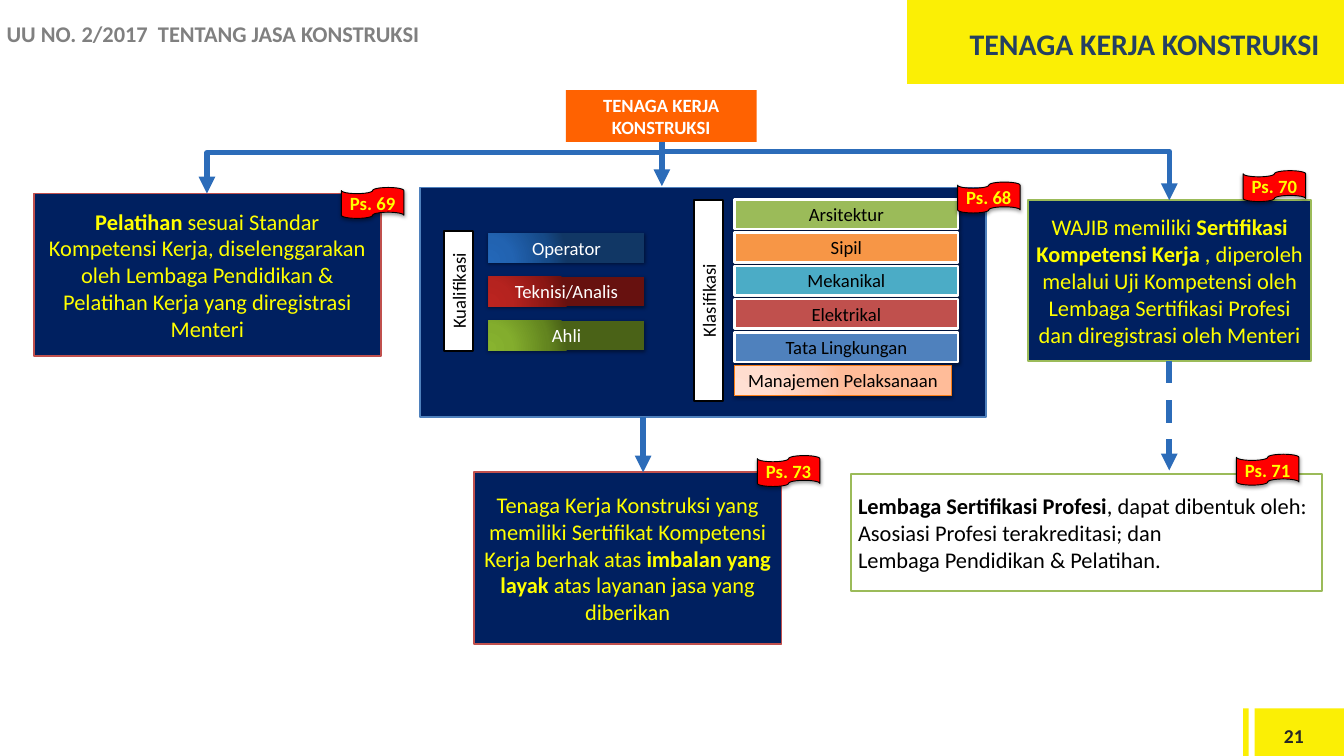
from dataclasses import dataclass
from lxml.etree import SubElement
from pptx import Presentation
from pptx.dml.color import RGBColor
from pptx.enum.dml import MSO_LINE
from pptx.enum.shapes import MSO_CONNECTOR, MSO_SHAPE
from pptx.enum.text import MSO_ANCHOR, MSO_AUTO_SIZE, PP_ALIGN
from pptx.oxml.ns import qn
from pptx.util import Inches, Pt


@dataclass(frozen=True)
class Theme:
    font: str = "Calibri"
    title: int = 32
    body: int = 24
    page: int = 21
    label: int = 20
    brand: str = "FBEF05"
    ink: str = "254061"
    navy: str = "002060"
    yellow: str = "FFFF00"
    orange: str = "FF6201"
    flow: str = "2C6CB9"
    red: str = "C0504D"
    green: str = "9BBB59"
    blue: str = "4F81BD"
    tape: str = "FF0000"
    gray: str = "808080"
    dark: str = "262626"
    black: str = "000000"
    white: str = "FFFFFF"


T = Theme()
STOPS = (0, 30, 75, 100)
SOFT = (42, 1.6)   # shadow opacity in percent, distance in points
FIRM = (40, 2)

# Place, border colour, text; ** marks bold
NOTES = [
    ((7.05, 7.03, 4.58, 2.55), T.red,
     "Tenaga Kerja Konstruksi yang memiliki Sertifikat Kompetensi Kerja berhak atas "
     "**imbalan yang layak **atas layanan jasa yang diberikan"),
    ((15.3, 2.98, 4.21, 2.39), T.green,
     "WAJIB memiliki **Sertifikasi Kompetensi Kerja **, diperoleh melalui Uji Kompetensi "
     "oleh Lembaga Sertifikasi Profesi dan diregistrasi oleh Menteri"),
    ((0.5, 2.88, 5.17, 2.42), T.red,
     "**Pelatihan **sesuai Standar Kompetensi Kerja, diselenggarakan oleh Lembaga "
     "Pendidikan & Pelatihan Kerja yang diregistrasi Menteri"),
]
BODIES = ["**Lembaga Sertifikasi Profesi**, dapat dibentuk oleh:",
          "Asosiasi Profesi terakreditasi; dan",
          "Lembaga Pendidikan & Pelatihan."]
LEVELS = [
    ("Operator", ("2367B8", "2263B1", "164A88", "113765")),
    ("Teknisi/Analis", ("BC2420", "B5231F", "8B1714", "67110F")),
    ("Ahli", ("88B32F", "83AD2D", "63851F", "4A6217")),
]
FIELDS = [
    ("Arsitektur", T.green), ("Sipil", "F79646"), ("Mekanikal", "4BACC6"),
    ("Elektrikal", T.red), ("Tata Lingkungan", T.blue),
    ("Manajemen Pelaksanaan", ("FFE0D3", "FFDDCF", "FFCCB5", "FFBC99")),
]
SIDES = [("Kualifikasi", (5.93, 4.11, 1.79, 0.44)),
         ("Klasifikasi", (9.05, 4.25, 2.99, 0.44))]
TAPES = [("Ps. 68", 14.25, 2.71), ("Ps. 69", 5.08, 2.79), ("Ps. 70", 18.5, 2.54),
         ("Ps. 71", 18.4, 6.76), ("Ps. 73", 11.27, 6.78)]
ROOT = (9.85, 2.12)


def color(code):
    return RGBColor.from_string(code)


def write(shape, text, size=T.label, ink=T.black, bold=False, align=PP_ALIGN.CENTER,
          anchor=MSO_ANCHOR.MIDDLE, grow=False, inset=(0.1, 0.05)):
    """Fill a shape with text: a list gives paragraphs, ** toggles bold."""
    frame = shape.text_frame
    frame.word_wrap = True
    frame.vertical_anchor = MSO_ANCHOR.TOP if grow else anchor
    frame.auto_size = MSO_AUTO_SIZE.SHAPE_TO_FIT_TEXT if grow else MSO_AUTO_SIZE.NONE
    frame.margin_left = frame.margin_right = Inches(inset[0])
    frame.margin_top = frame.margin_bottom = Inches(inset[1])
    for i, line in enumerate([text] if isinstance(text, str) else text):
        para = frame.add_paragraph() if i else frame.paragraphs[0]
        para.alignment = align
        for j, part in enumerate(line.split("**")):
            if part:
                run = para.add_run()
                run.text = part
                run.font.name, run.font.size = T.font, Pt(size)
                run.font.bold = bold or j % 2 == 1
                run.font.color.rgb = color(ink)


def blend(shape, codes):
    """Swap the solid fill for a radial gradient."""
    solid = shape._element.spPr.find(qn("a:solidFill"))
    grad = solid.makeelement(qn("a:gradFill"), {"rotWithShape": "1"})
    stops = SubElement(grad, qn("a:gsLst"))
    for pos, code in zip(STOPS, codes):
        stop = SubElement(stops, qn("a:gs"), pos=str(pos * 1000))
        SubElement(stop, qn("a:srgbClr"), val=code)
    path = SubElement(grad, qn("a:path"), path="circle")
    SubElement(path, qn("a:fillToRect"), l="5000", t="100000", r="120000", b="10000")
    solid.getparent().replace(solid, grad)


def shade(shape, alpha, dist):
    effects = shape._element.spPr.find(qn("a:effectLst"))
    outer = SubElement(effects, qn("a:outerShdw"), blurRad=str(Pt(4)), dist=str(Pt(dist)),
                       dir="5400000", rotWithShape="0")
    tint = SubElement(outer, qn("a:srgbClr"), val=T.black)
    SubElement(tint, qn("a:alpha"), val=str(alpha * 1000))


def box(host, at, fill, text=None, line=None, width=2, shadow=None, turn=0,
        kind=MSO_SHAPE.RECTANGLE, **style):
    shape = host.add_shape(kind, *map(Inches, at))
    shape.shadow.inherit = False
    shape.rotation = turn
    shape.fill.solid()
    if isinstance(fill, str):
        shape.fill.fore_color.rgb = color(fill)
    else:
        blend(shape, fill)
    if line:
        shape.line.color.rgb = color(line)
        shape.line.width = Pt(width)
    else:
        shape.line.fill.background()
    if shadow:
        shade(shape, *shadow)
    if text:
        write(shape, text, **style)


def label(host, at, text, **style):
    write(host.add_textbox(*map(Inches, at)), text, **style)


def arrow(host, start, end, dash=False, bend=None):
    """Draw an arrow; bend is the share of the drop before an elbow turns."""
    kind = MSO_CONNECTOR.ELBOW if bend else MSO_CONNECTOR.STRAIGHT
    link = host.add_connector(kind, *map(Inches, start + end))
    link.line.color.rgb = color(T.flow)
    link.line.width = Pt(6)
    if dash:
        link.line.dash_style = MSO_LINE.DASH
    props = link._element.spPr
    SubElement(link.line._get_or_add_ln(), qn("a:tailEnd"), type="triangle")
    SubElement(props, qn("a:effectLst"))
    if bend:
        (x1, y1), (x2, y2) = start, end
        drop, span = y2 - y1, abs(x2 - x1)
        link.left, link.top = Inches((x1 + x2 - drop) / 2), Inches((y1 + y2 - span) / 2)
        link.width, link.height = Inches(drop), Inches(span)
        frame = props.find(qn("a:xfrm"))
        left = x2 < x1
        frame.set("rot", str((90 if left else 270) * 60000))
        frame.set("flipH", "0" if left else "1")
        guides = props.find(qn("a:prstGeom")).find(qn("a:avLst"))
        SubElement(guides, qn("a:gd"), name="adj1", fmla=f"val {round(bend * 100000)}")


def panel(host):
    box(host, (6.25, 2.79, 8.42, 3.42), T.navy, line=T.blue)
    for text, at in SIDES:
        box(host, at, T.white, text, line=T.black, turn=270, grow=True)
    for i, (text, fill) in enumerate(LEVELS):
        box(host, (7.27, 3.47 + 0.65 * i, 2.32, 0.44), fill, text, shadow=SOFT,
            ink=T.white, grow=True)
    step = (5.44 - 2.97) / (len(FIELDS) - 1)
    for i, (text, fill) in enumerate(FIELDS):
        flat = isinstance(fill, str)
        box(host, (10.93, 2.97 + step * i, 3.33 if flat else 3.23, 0.44), fill, text,
            line=T.white if flat else "F97D16", width=2.75 if flat else 1,
            shadow=FIRM, grow=True)


def main():
    deck = Presentation()
    deck.slide_width, deck.slide_height = Inches(20), Inches(11.25)
    slide = deck.slides.add_slide(deck.slide_layouts[6])
    host = slide.shapes

    box(host, (13.5, 0, 6.5, 1.25), T.brand)
    label(host, (14.33, 0.33, 5.75, 0.64), "TENAGA KERJA KONSTRUKSI", size=T.title,
          ink=T.ink, bold=True, align=PP_ALIGN.LEFT, grow=True)
    box(host, (8.42, 1.34, 2.84, 0.77), T.orange, "TENAGA KERJA KONSTRUKSI",
        ink=T.white, bold=True, grow=True)
    for at, line, text in NOTES:
        box(host, at, T.navy, text, line=line, size=T.body, ink=T.yellow)
    box(host, (12.67, 7.06, 7, 1.73), T.white, BODIES, line=T.green, size=T.body,
        align=PP_ALIGN.LEFT)
    panel(host.add_group_shape().shapes)
    for text, left, top in TAPES:
        box(host, (left, top, 0.93, 0.46), T.tape, text, line=T.black, width=1,
            shadow=FIRM, kind=MSO_SHAPE.FLOWCHART_PUNCHED_TAPE, ink=T.yellow, bold=True)
    label(host, (0, 0.12, 7.75, 0.75), "UU NO. 2/2017  TENTANG JASA KONSTRUKSI",
          size=T.body, ink=T.gray, bold=True, align=PP_ALIGN.LEFT)

    arrow(host, (17.4, 5.37), (17.4, 7), dash=True)
    arrow(host, (9.57, 6.21), (9.57, 7.03))
    arrow(host, ROOT, (3.08, 2.88), bend=0.2)
    arrow(host, ROOT, (17.4, 2.98), bend=0.16)
    arrow(host, ROOT, (9.85, 2.77))

    foot = host.add_group_shape().shapes
    for left, width in ((18.67, 1.33), (18.5, 0.08)):
        box(foot, (left, 10.54, width, 0.71), T.brand)
    label(foot, (18.79, 10.64, 0.79, 0.61), "21", size=T.page, ink=T.dark, bold=True,
          align=PP_ALIGN.RIGHT, inset=(0.18, 0.09))
    deck.save("out.pptx")


if __name__ == "__main__":
    main()
